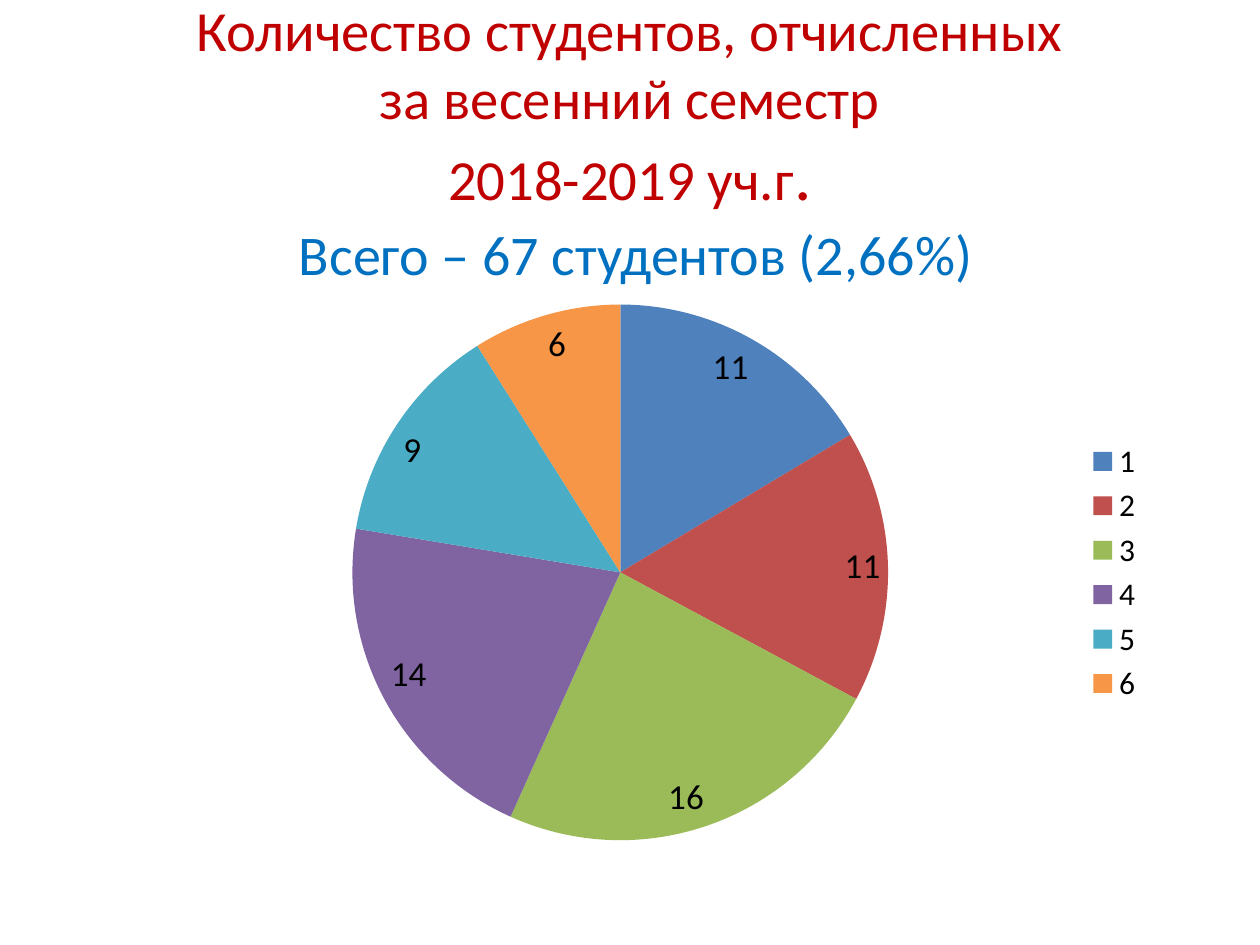
import copy

import pptx
import pptx.chart.data
import pptx.dml.color
import pptx.enum.chart
import pptx.enum.text
import pptx.util
from lxml import etree

EMU_PER_PX = 914400 // 126
FONT = "Calibri"
RED = pptx.dml.color.RGBColor(0xC0, 0x00, 0x00)
BLUE = pptx.dml.color.RGBColor(0x00, 0x70, 0xC0)
BLACK = pptx.dml.color.RGBColor(0x00, 0x00, 0x00)
SLICE_COLORS = [
    pptx.dml.color.RGBColor.from_string(code)
    for code in ("4F81BD", "C0504D", "9BBB59", "8064A2", "4BACC6", "F79646")
]
STUDENTS = (11, 11, 16, 14, 9, 6)


def px(*lengths):
    return [pptx.util.Emu(length * EMU_PER_PX) for length in lengths]


def place(shape, left, top, width, height):
    shape.left, shape.top, shape.width, shape.height = px(left, top, width, height)


def format_font(font, size, color):
    font.name = FONT
    font.size = pptx.util.Pt(size)
    font.color.rgb = color


def add_text(para, text, *, size, color):
    """Add text to a paragraph; line breaks keep the format of the text."""
    for index, line in enumerate(text.split("\n")):
        if index:
            para.add_line_break()
            para._p[-1].append(copy.deepcopy(span._r.rPr))
        span = para.add_run()
        span.text = line
        format_font(span.font, size, color)


def centered_paragraph(shape):
    frame = shape.text_frame
    frame.word_wrap = True
    frame.auto_size = pptx.enum.text.MSO_AUTO_SIZE.NONE
    frame.vertical_anchor = pptx.enum.text.MSO_ANCHOR.MIDDLE
    para = frame.paragraphs[0]
    para.alignment = pptx.enum.text.PP_ALIGN.CENTER
    return para


def set_plot_area(chart, **fractions):
    """Fix the inner plot area as fractions of the chart."""
    plot_area = chart._chartSpace.chart.plotArea
    namespace = etree.QName(plot_area).namespace
    for old in plot_area.findall(f"{{{namespace}}}layout"):
        plot_area.remove(old)
    layout = etree.Element(f"{{{namespace}}}layout")
    manual = etree.SubElement(layout, f"{{{namespace}}}manualLayout")
    settings = {"layoutTarget": "inner", "xMode": "edge", "yMode": "edge", **fractions}
    for name, value in settings.items():
        etree.SubElement(manual, f"{{{namespace}}}{name}", val=str(value))
    plot_area.insert(0, layout)


def add_pie(slide, left, top, width, height):
    data = pptx.chart.data.CategoryChartData()
    data.categories = [str(number + 1) for number in range(len(STUDENTS))]
    data.add_series("Series 1", STUDENTS)
    chart = slide.shapes.add_chart(
        pptx.enum.chart.XL_CHART_TYPE.PIE, *px(left, top, width, height), data
    ).chart
    chart.has_title = False
    format_font(chart.font, 18, BLACK)
    set_plot_area(chart, x=0.19, y=0.03, w=0.54, h=0.94)

    # Legend
    chart.has_legend = True
    chart.legend.position = pptx.enum.chart.XL_LEGEND_POSITION.RIGHT
    chart.legend.include_in_layout = False

    # Slices and their values
    plot = chart.plots[0]
    plot.vary_by_categories = True
    for index, color in enumerate(SLICE_COLORS):
        fill = plot.series[0].points[index].format.fill
        fill.solid()
        fill.fore_color.rgb = color
    plot.has_data_labels = True
    labels = plot.data_labels
    labels.show_value = True
    labels.show_percentage = False
    labels.position = pptx.enum.chart.XL_LABEL_POSITION.INSIDE_END
    format_font(labels.font, 20, BLACK)


def main():
    deck = pptx.Presentation()
    deck.slide_width, deck.slide_height = px(1260, 945)
    slide = deck.slides.add_slide(deck.slide_layouts[5])

    # Title
    title = slide.shapes.title
    place(title, 0, 5, 1260, 199)
    para = centered_paragraph(title)
    heading = "Количество студентов, отчисленных\nза весенний семестр\n2018-2019 уч.г"
    add_text(para, heading, size=32.4, color=RED)
    add_text(para, ".", size=39.6, color=RED)

    # Total
    total = slide.shapes.add_textbox(*px(69, 195, 1134, 117))
    add_text(centered_paragraph(total), "Всего – 67 студентов (2,66%)", size=32, color=BLUE)

    # Students by year
    add_pie(slide, 164, 285, 992, 575)
    deck.save("out.pptx")


if __name__ == "__main__":
    main()
